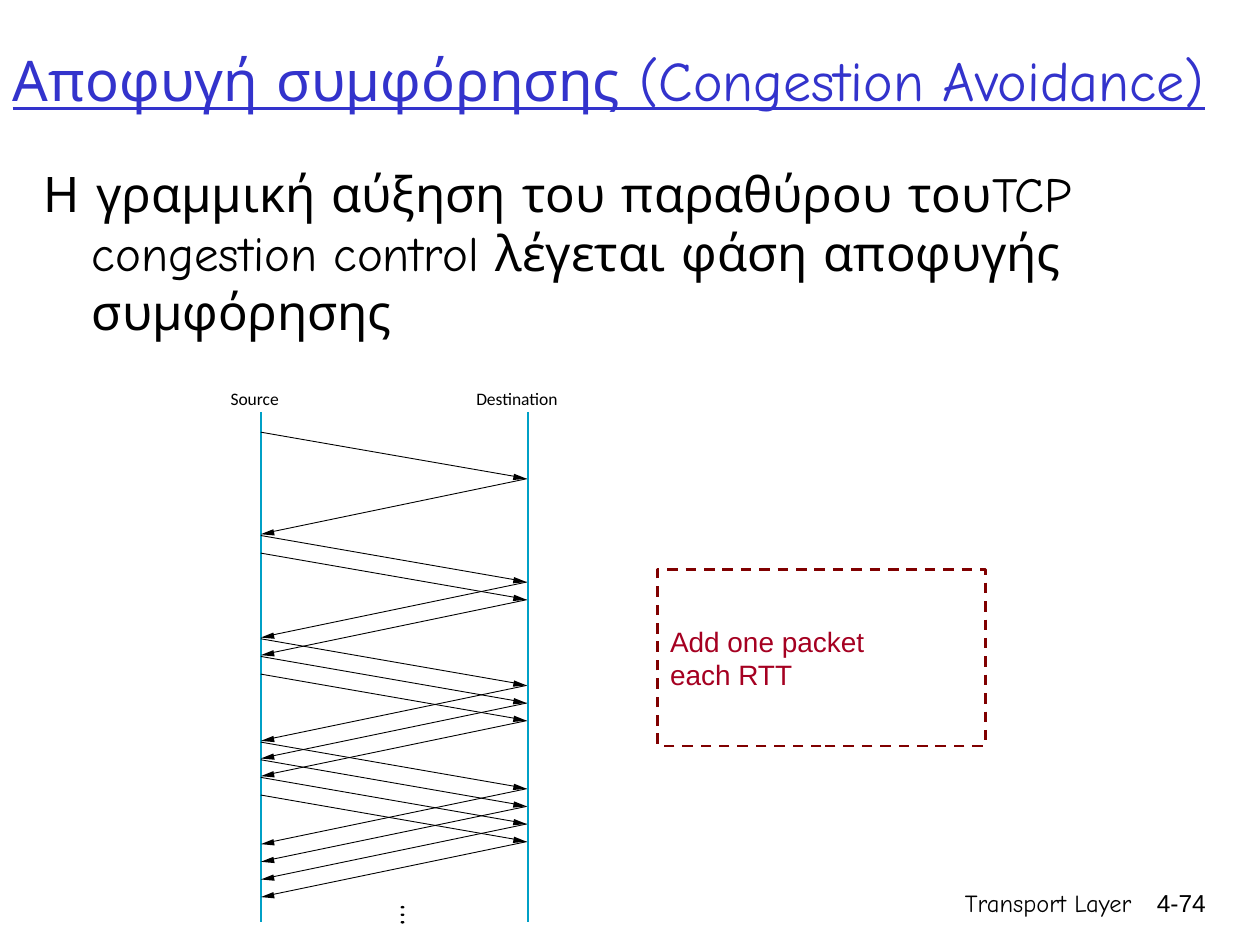
from pptx import Presentation
from pptx.dml.color import RGBColor
from pptx.enum.dml import MSO_LINE
from pptx.enum.shapes import MSO_CONNECTOR, MSO_SHAPE
from pptx.enum.text import MSO_ANCHOR, MSO_AUTO_SIZE, PP_ALIGN
from pptx.oxml.ns import qn
from pptx.util import Inches, Pt
from lxml.etree import SubElement

BLACK = RGBColor(0x00, 0x00, 0x00)
BLUE = RGBColor(0x33, 0x33, 0xCC)
TEAL = RGBColor(0x00, 0xA0, 0xC6)
MAROON = RGBColor(0x80, 0x00, 0x00)
RED = RGBColor(0xA5, 0x00, 0x21)
COMIC = "Comic Neue"


def put_text(shape, text, size, font=COMIC, color=BLACK, align=PP_ALIGN.LEFT,
             anchor=MSO_ANCHOR.TOP, wrap=True, inset=None, under=None,
             before=0, hang=0):
    frame = shape.text_frame
    frame.text = text
    frame.auto_size = MSO_AUTO_SIZE.NONE
    frame.word_wrap = wrap
    frame.vertical_anchor = anchor
    if inset is not None:
        frame.margin_left = frame.margin_right = Inches(inset)
        frame.margin_top = frame.margin_bottom = Inches(inset)
    for para in frame.paragraphs:
        para.alignment = align
        para.space_before = Pt(before)
        if hang:
            props = para._p.get_or_add_pPr()
            props.set("marL", str(Inches(hang)))
            props.set("indent", str(-Inches(hang)))
        for run in para.runs:
            run.font.size = Pt(size)
            run.font.name = font
            run.font.color.rgb = color
            run.font.underline = under


def add_text(slide, box, text, size, **style):
    shape = slide.shapes.add_textbox(*map(Inches, box))
    put_text(shape, text, size, **style)


def add_line(slide, x1, y1, x2, y2, color, width):
    line = slide.shapes.add_connector(
        MSO_CONNECTOR.STRAIGHT, *map(Inches, (x1, y1, x2, y2)))
    line.line.color.rgb = color
    line.line.width = Pt(width)
    SubElement(line._element.spPr, qn("a:effectLst"))


def fill_black(shape):
    shape.shadow.inherit = False
    shape.fill.solid()
    shape.fill.fore_color.rgb = BLACK
    shape.line.fill.background()


def add_head(slide, points):
    first, *rest = [(Inches(x), Inches(y)) for x, y in points]
    outline = slide.shapes.build_freeform(*first)
    outline.add_line_segments(rest, close=True)
    fill_black(outline.convert_to_shape())


def add_title(slide, box):
    title = slide.shapes.title
    title.left, title.top, title.width, title.height = map(Inches, box)
    put_text(title, "Αποφυγή συμφόρησης (Congestion Avoidance)", 32,
             color=BLUE, anchor=MSO_ANCHOR.MIDDLE, under=True)


def add_trip(slide, left, right, top):
    # Packet out to the destination
    turn = top + 0.37
    add_line(slide, left, top, right - 0.1, top + 0.35, BLACK, 0.5)
    add_head(slide, [(right - 0.11, turn + 0.01), (right, turn),
                     (right - 0.1, turn - 0.04)])
    # Reply back to the source
    end = turn + 0.44
    add_line(slide, right, turn, left + 0.09, end - 0.02, BLACK, 0.5)
    add_head(slide, [(left + 0.1, end - 0.04), (left, end),
                     (left + 0.11, end + 0.01)])


def add_flow(slide, box):
    left, top, width, height = box
    right = left + width
    # Labels and time lines
    for x, gap, wide, label in ((left, 0.24, 0.44, "Source"),
                                (right, 0.41, 0.69, "Destination")):
        add_text(slide, (x - gap, top - 0.19, wide, 0.17), label, 10,
                 font="Calibri", wrap=False, inset=0)
        add_line(slide, x, top, x, top + height, TEAL, 1)
    # Each round sends one packet more
    for turn in range(4):
        for packet in range(turn + 1):
            start = top + 0.16 + 0.82 * turn + 0.14 * packet
            add_trip(slide, left, right - 0.01, start)
    # Dots for further rounds
    for step in range(3):
        dot = slide.shapes.add_shape(
            MSO_SHAPE.OVAL, Inches(left + 1.11),
            Inches(top + 3.92 + 0.06 * step), Inches(0.03), Inches(0.02))
        fill_black(dot)


def add_note(slide, box):
    note = slide.shapes.add_shape(MSO_SHAPE.RECTANGLE, *map(Inches, box))
    note.shadow.inherit = False
    note.fill.background()
    note.line.color.rgb = MAROON
    note.line.width = Pt(1.5)
    note.line.dash_style = MSO_LINE.DASH
    put_text(note, "Add one packet\neach RTT", 16, font="Arial", color=RED,
             anchor=MSO_ANCHOR.MIDDLE, wrap=False)


def add_footer(slide, box):
    left, top, width, height = box
    add_text(slide, (left, top, 4.08, height), "Transport Layer", 14,
             align=PP_ALIGN.RIGHT)
    add_text(slide, (left + width - 0.74, top, 0.74, height), "4-74", 14,
             font="Arial", align=PP_ALIGN.RIGHT)


def main():
    deck = Presentation()
    deck.slide_width, deck.slide_height = Inches(10), Inches(7.5)
    slide = deck.slides.add_slide(deck.slide_layouts[5])
    add_title(slide, (0, 0, 9.67, 1.25))
    add_text(slide, (0.25, 1.25, 9.75, 5.08),
             "Η γραμμική αύξηση του παραθύρου τουTCP congestion control "
             "λέγεται φάση αποφυγής συμφόρησης",
             28, before=5.6, hang=0.38)
    add_flow(slide, (2.07, 3.27, 2.12, 4.05))
    add_note(slide, (5.22, 4.52, 2.6, 1.4))
    add_footer(slide, (5, 7, 4.67, 0.5))
    deck.save("out.pptx")


if __name__ == "__main__":
    main()
